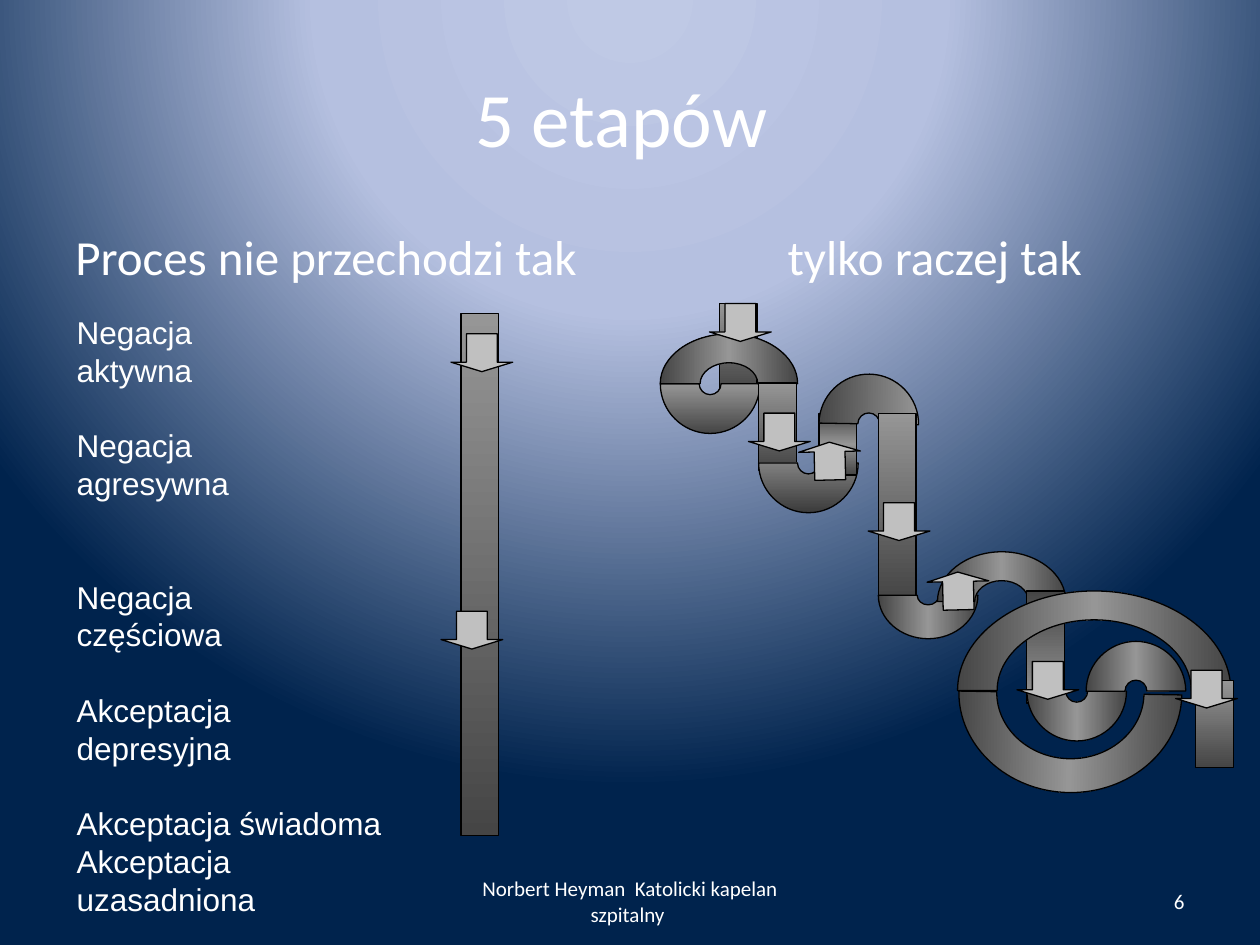
from lxml import etree
from pptx import Presentation
from pptx.dml.color import RGBColor
from pptx.enum.shapes import MSO_SHAPE
from pptx.enum.text import MSO_ANCHOR, PP_ALIGN
from pptx.oxml.ns import qn
from pptx.util import Pt

RECTANGLE, DOWN_ARROW = MSO_SHAPE.RECTANGLE, MSO_SHAPE.DOWN_ARROW
TOP, MIDDLE = MSO_ANCHOR.TOP, MSO_ANCHOR.MIDDLE
LEFT, CENTER, RIGHT = PP_ALIGN.LEFT, PP_ALIGN.CENTER, PP_ALIGN.RIGHT

WHITE, BLACK, SILVER = "FFFFFF", "000000", "C0C0C0"
FADE = [(0, "969696"), (100, "454545")]
RISE = [(0, "454545"), (100, "969696")]
SHEEN = [(0, "454545"), (50, "969696"), (100, "454545")]
DIM = [(0, "3B3B3B"), (50, "808080"), (100, "3B3B3B")]
SKY = [(0, "BFC9E5"), (40, "B5C0E0"), (100, "00234D")]

BAR_WIDTH = 21.6
ARROW_SIZE = (35.3, 21.6)
BEND = 56.9
CURVE = 0.55

STAGES = [
    ("Negacja", 0), ("aktywna", 0),
    ("Negacja", 1), ("agresywna", 0),
    ("Negacja", 2), ("częściowa", 0),
    ("Akceptacja", 1), ("depresyjna", 0),
    ("Akceptacja świadoma", 1), ("Akceptacja uzasadniona", 0),
]


def color(value):
    return RGBColor.from_string(value)


def set_gradient(gradient, stops, angle=None):
    for child in list(gradient):
        gradient.remove(child)
    stop_list = etree.SubElement(gradient, qn("a:gsLst"))
    for position, value in stops:
        stop = etree.SubElement(stop_list, qn("a:gs"), pos=str(position * 1000))
        etree.SubElement(stop, qn("a:srgbClr"), val=value)
    if angle is None:
        circle = etree.SubElement(gradient, qn("a:path"), path="circle")
        etree.SubElement(circle, qn("a:fillToRect"),
                         l="50000", t="-80000", r="50000", b="180000")
    else:
        etree.SubElement(gradient, qn("a:lin"), ang=str(angle * 60000), scaled="0")


def paint_background(page):
    page.background.fill.gradient()
    set_gradient(page._element.xpath(".//p:bg//a:gradFill")[0], SKY)


def outline(shape):
    shape.shadow.inherit = False
    shape.line.color.rgb = color(BLACK)
    shape.line.width = Pt(0.75)


def shade(shape, stops, angle):
    shape.fill.gradient()
    set_gradient(shape._element.xpath("./p:spPr/a:gradFill")[0], stops, angle)
    outline(shape)


def add_bar(page, left, top, height, stops=FADE):
    bar = page.shapes.add_shape(RECTANGLE, Pt(left), Pt(top), Pt(BAR_WIDTH), Pt(height))
    shade(bar, stops, 90)


def add_arrow(page, left, top, rotation=0):
    width, height = ARROW_SIZE
    arrow = page.shapes.add_shape(DOWN_ARROW, Pt(left), Pt(top), Pt(width), Pt(height))
    arrow.adjustments[0], arrow.adjustments[1] = 0.5, 0.25
    arrow.rotation = rotation
    arrow.fill.solid()
    arrow.fill.fore_color.rgb = color(SILVER)
    outline(arrow)


def draw_half_ring(track, width, height, hole):
    def step(kind, *points):
        command = etree.SubElement(track, qn(kind))
        for x, y in points:
            etree.SubElement(command, qn("a:pt"), x=str(Pt(width / 2 * (1 + x))),
                             y=str(Pt(height / 2 * (1 + y))))

    def over(radius, side):
        step("a:cubicBezTo", (side * radius, -CURVE * radius),
             (side * CURVE * radius, -radius), (0, -radius))
        step("a:cubicBezTo", (-side * CURVE * radius, -radius),
             (-side * radius, -CURVE * radius), (-side * radius, 0))

    for child in list(track):
        track.remove(child)
    track.set("h", str(Pt(height)))
    step("a:moveTo", (-hole, 0))
    over(hole, -1)
    step("a:lnTo", (1, 0))
    over(1, 1)
    step("a:close")


def add_arc(page, left, top, width=BEND, height=BEND, rotation=0, hole=0.22,
            stops=SHEEN, angle=0):
    builder = page.shapes.build_freeform(Pt(left), Pt(top))
    builder.add_line_segments([(Pt(left + width), Pt(top + height))])
    arc = builder.convert_to_shape()
    draw_half_ring(arc._element.xpath(".//a:path")[0], width, height, hole)
    arc.rotation = rotation
    shade(arc, stops, angle)


def add_text(page, box, text, size, font="Calibri", align=LEFT, anchor=TOP):
    holder = page.shapes.add_textbox(*map(Pt, box))
    format_text(holder, text, size, font, align, anchor)
    return holder.text_frame


def format_text(holder, text, size, font, align, anchor):
    frame = holder.text_frame
    frame.word_wrap = True
    frame.vertical_anchor = anchor
    frame.text = text
    for para in frame.paragraphs:
        para.alignment = align
        for span in para.runs:
            span.font.size = Pt(size)
            span.font.name = font
            span.font.color.rgb = color(WHITE)


def place_title(page, left, top, width, height):
    title = page.shapes.title
    title.left, title.top, title.width, title.height = map(Pt, (left, top, width, height))
    format_text(title, "5 etapów ", 44, "Calibri", CENTER, MIDDLE)


def place_headings(page, left, top, width, height):
    frame = add_text(page, (left, top, width, height),
                     "Proces nie przechodzi tak\ttylko raczej tak", 28)
    para = frame.paragraphs[0]
    para.space_before = Pt(5.6)
    tabs = etree.SubElement(para._p.get_or_add_pPr(), qn("a:tabLst"))
    etree.SubElement(tabs, qn("a:tab"), pos=str(Pt(407)), algn="l")


def place_stages(page, left, top, width, height):
    line = 21.6
    frame = add_text(page, (left, top, width, height),
                     "\n".join(name for name, gap in STAGES), 18, "Arial")
    frame.margin_top = Pt(37.8)
    for para, (name, gap) in zip(frame.paragraphs, STAGES):
        para.line_spacing = Pt(line)
        para.space_before = Pt(gap * line)


def place_straight_way(page, left, top, height):
    add_bar(page, left, top, height)
    add_arrow(page, left - 5.8, top + 11.5)
    add_arrow(page, left - 11.5, top + 170)


def place_winding_way(page, left, top):
    def bar(x, y, *rest):
        add_bar(page, left + x, top + y, *rest)

    def arc(x, y, *size, **look):
        add_arc(page, left + x, top + y, *size, **look)

    bar(33.8, 0, 49.7)
    arc(0, 17.3, rotation=180, angle=90)
    arc(0, 17.3, 78.5, hole=0.42)
    bar(56.2, 45.4, 49.7)
    arc(56.2, 62.6, rotation=180, stops=DIM, angle=90)
    bar(90.7, 62.6, 35.3, SHEEN)
    arc(90.7, 40.3, rotation=0.9, stops=RISE)
    bar(124.6, 62.6, 106.6)
    arc(124.6, 141.8, BEND, 49.7, rotation=180)
    arc(158.4, 141.8, 73.4, hole=0.42)
    bar(209.5, 164.2, 64.1, RISE)
    arc(209.5, 193, rotation=180)
    arc(243.4, 193, rotation=359.8)
    arc(170.6, 165.6, 127.4, 113.8, rotation=181, hole=0.66)
    arc(169.9, 164.2, 156.2, 113.8, hole=0.71)
    bar(306, 215.3, 49.7)

    for x, y, rotation in [(28.1, 0, 0), (79.2, 79.2, 178.7), (118.8, 113.8, 0),
                           (152.6, 153.4, 178.7), (203.8, 204.5, 0),
                           (294.5, 209.5, 0), (50.4, 62.6, 0)]:
        add_arrow(page, left + x, top + y, rotation)


def place_footer(page, top, height):
    credit = add_text(page, (246, top, 228, height),
                      "Norbert Heyman  Katolicki kapelan szpitalny ", 12,
                      align=CENTER, anchor=MIDDLE)
    credit.margin_left = credit.margin_right = Pt(9)
    add_text(page, (516, top, 168, height), "6", 12, align=RIGHT, anchor=MIDDLE)


def main():
    deck = Presentation()
    deck.slide_width, deck.slide_height = Pt(720), Pt(540)
    page = deck.slides.add_slide(deck.slide_layouts[5])
    paint_background(page)
    place_title(page, 36, 21.6, 648, 90)
    place_headings(page, 36, 126, 648, 356.4)
    place_footer(page, 500.5, 28.8)
    place_straight_way(page, 263.5, 179.3, 298)
    place_winding_way(page, 377.3, 173.5)
    place_stages(page, 36.7, 141.1, 193, 378)
    deck.save("out.pptx")


if __name__ == "__main__":
    main()
